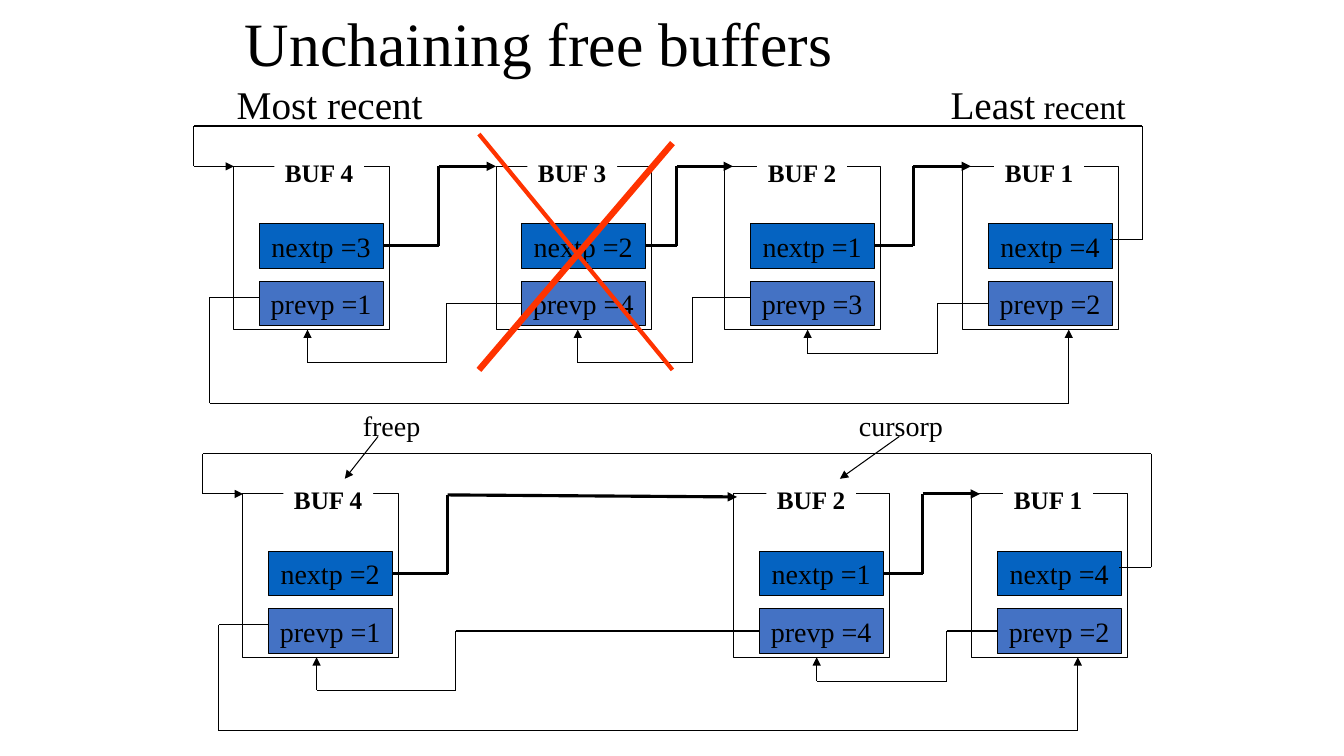
from dataclasses import dataclass

from lxml import etree
from pptx import Presentation
from pptx.dml.color import RGBColor
from pptx.enum.shapes import MSO_CONNECTOR, MSO_SHAPE
from pptx.enum.text import MSO_ANCHOR, MSO_AUTO_SIZE, PP_ALIGN
from pptx.oxml.ns import qn
from pptx.shapes.autoshape import Shape
from pptx.slide import Slide
from pptx.util import Inches, Pt

BLACK = RGBColor(0x00, 0x00, 0x00)
WHITE = RGBColor(0xFF, 0xFF, 0xFF)
NEXT_BLUE = RGBColor(0x05, 0x63, 0xC1)
PREV_BLUE = RGBColor(0x44, 0x72, 0xC4)
RED = RGBColor(0xFF, 0x33, 0x00)
FONT = "Times New Roman"
THIN, BOLD = 0.75, 2.25
FRAME_TOP = 1.65
SIDES = {"nextp": 3, "prevp": 1}

Point = tuple[float, float]
Cells = dict[tuple[str, int], Shape]


@dataclass
class Buffer:
    number: int
    left: float
    label_left: float
    nextp: int
    prevp: int


@dataclass
class Link:
    """A bent arrow; with a source cell it starts at the middle of that cell's side."""
    points: list[Point]
    width: float = THIN
    source: tuple[str, int] | None = None


@dataclass
class Chain:
    dx: float
    dy: float
    buffers: list[Buffer]
    links: list[Link]


@dataclass
class Caption:
    left: float
    top: float
    width: float
    height: float
    runs: list[tuple[str, int]]


COMMON_LINKS = [
    Link([(11.01, 2.38), (11.33, 2.38), (11.33, 1.25), (1.92, 1.25), (1.92, 1.65), (2.32, 1.65)]),
    Link([(2.57, 2.95), (2.08, 2.95), (2.08, 4), (10.6, 4), (10.6, 3.27)]),
    Link([(8.67, 2.44), (9.06, 2.44), (9.06, 1.65), (9.63, 1.65)], BOLD, ("nextp", 2)),
    Link([(9.8, 3.01), (9.3, 3.01), (9.3, 3.51), (8.01, 3.51), (8.01, 3.27)], THIN, ("prevp", 1)),
]
TO_BUF_4 = [(4.43, 3.01), (4.43, 3.6), (3.05, 3.6), (3.05, 3.27)]
BUF_1 = Buffer(1, 9.55, 9.86, nextp=4, prevp=2)

CHAINS = [
    Chain(0, 0, [
        Buffer(4, 2.32, 2.72, nextp=3, prevp=1),
        Buffer(3, 4.92, 5.23, nextp=2, prevp=4),
        Buffer(2, 7.19, 7.51, nextp=1, prevp=3),
        BUF_1,
    ], COMMON_LINKS + [
        Link([(3.8, 2.44), (4.35, 2.44), (4.35, 1.65), (4.92, 1.65)], BOLD, ("nextp", 4)),
        Link([(6.4, 2.44), (6.71, 2.44), (6.71, 1.65), (7.27, 1.65)], BOLD, ("nextp", 3)),
        Link([(5.17, 3.01)] + TO_BUF_4, THIN, ("prevp", 3)),
        Link([(7.44, 2.95), (6.87, 2.95), (6.87, 3.6), (5.73, 3.6), (5.73, 3.27)]),
    ]),
    Chain(0.09, 3.25, [
        Buffer(4, 2.32, 2.72, nextp=2, prevp=1),
        Buffer(2, 7.19, 7.51, nextp=1, prevp=4),
        BUF_1,
    ], COMMON_LINKS + [
        Link([(3.8, 2.44), (4.35, 2.44), (4.35, 1.66), (7.22, 1.68)], BOLD, ("nextp", 4)),
        Link([(7.44, 3.01)] + TO_BUF_4, THIN, ("prevp", 2)),
    ]),
]
CAPTIONS = [
    Caption(2.25, 0.75, 2.3, 0.57, [("Most recent", 28)]),
    Caption(9.33, 0.75, 2.2, 0.57, [("Least", 28), (" recent", 24)]),
    Caption(3.5, 4, 0.9, 0.43, [("freep", 20)]),
    Caption(8.42, 4, 1.2, 0.43, [("cursorp", 20)]),
]
POINTERS = [((3.75, 4.33), (3.42, 4.75)), ((8.92, 4.33), (8.33, 4.75))]
CROSS = [((6.67, 1.42), (4.75, 3.67), 4.5), ((4.75, 1.33), (6.67, 3.67), 3)]


def write(sp: Shape, runs: list[tuple[str, int]], align: PP_ALIGN, wrap: bool, bold: bool = False) -> None:
    tf = sp.text_frame
    tf.word_wrap = wrap
    p = tf.paragraphs[0]
    p.alignment = align
    for text, size in runs:
        r = p.add_run()
        r.text = text
        formats = {"name": FONT, "size": Pt(size), "bold": bold}
        for name, value in formats.items():
            setattr(r.font, name, value)
        r.font.color.rgb = BLACK


def add_box(s: Slide, left: float, top: float, width: float, height: float,
            fill: RGBColor, outlined: bool = True) -> Shape:
    sp = s.shapes.add_shape(MSO_SHAPE.RECTANGLE, *map(Inches, (left, top, width, height)))
    sp.shadow.inherit = False
    sp.fill.solid()
    sp.fill.fore_color.rgb = fill
    if outlined:
        sp.line.color.rgb = BLACK
        sp.line.width = Pt(THIN)
    else:
        sp.line.fill.background()
    return sp


def add_line(s: Slide, start: Point, end: Point, width: float = THIN,
             color: RGBColor = BLACK, arrow: bool = False, source: Shape | None = None,
             side: int = 0) -> None:
    line = s.shapes.add_connector(MSO_CONNECTOR.STRAIGHT, *map(Inches, start + end))
    line.line.color.rgb = color
    line.line.width = Pt(width)
    if arrow:
        etree.SubElement(line.line._get_or_add_ln(), qn("a:tailEnd"), type="triangle")
    etree.SubElement(line._element.spPr, qn("a:effectLst"))
    if source is not None:
        line.begin_connect(source, side)


def add_buffer(s: Slide, chain: Chain, buf: Buffer) -> Cells:
    """Draw one buffer and return its pointer cells by field and number."""
    left, top = buf.left + chain.dx, FRAME_TOP + chain.dy
    add_box(s, left, top, 1.54, 1.62, WHITE)
    label = add_box(s, buf.label_left + chain.dx, top - 0.14, 0.89, 0.4, WHITE, outlined=False)
    write(label, [(f"BUF {buf.number}", 18)], PP_ALIGN.CENTER, wrap=False, bold=True)
    cells: Cells = {}
    fields = [("nextp", buf.nextp, 0.57, NEXT_BLUE), ("prevp", buf.prevp, 1.14, PREV_BLUE)]
    for field, target, drop, color in fields:
        cell = add_box(s, left + 0.25, top + drop, 1.23, 0.44, color)
        write(cell, [(f"{field} ={target}", 20)], PP_ALIGN.CENTER, wrap=True)
        cells[field, buf.number] = cell
    return cells


def add_chain(s: Slide, chain: Chain) -> None:
    cells: Cells = {}
    for buf in chain.buffers:
        cells.update(add_buffer(s, chain, buf))
    for link in chain.links:
        points = [(x + chain.dx, y + chain.dy) for x, y in link.points]
        last = len(points) - 2
        for i, (start, end) in enumerate(zip(points, points[1:])):
            joined = link.source if i == 0 else None
            add_line(s, start, end, link.width, arrow=i == last,
                     source=cells[joined] if joined else None,
                     side=SIDES[joined[0]] if joined else 0)


def add_title(s: Slide, text: str) -> None:
    title = s.shapes.title
    box = {"left": 2.33, "top": 0, "width": 8.5, "height": 0.92}
    for name, value in box.items():
        setattr(title, name, Inches(value))
    write(title, [(text, 44)], PP_ALIGN.LEFT, wrap=True)
    title.text_frame.auto_size = MSO_AUTO_SIZE.NONE
    title.text_frame.vertical_anchor = MSO_ANCHOR.MIDDLE
    title.text_frame.paragraphs[0].line_spacing = 0.9


def main() -> None:
    prs = Presentation()
    prs.slide_width, prs.slide_height = Inches(13.33), Inches(7.5)
    s = prs.slides.add_slide(prs.slide_layouts[5])
    add_title(s, "Unchaining free buffers")
    for chain in CHAINS:
        add_chain(s, chain)
    for start, end, width in CROSS:
        add_line(s, start, end, width, RED)
    for c in CAPTIONS:
        box = s.shapes.add_textbox(*map(Inches, (c.left, c.top, c.width, c.height)))
        write(box, c.runs, PP_ALIGN.LEFT, wrap=False)
    for start, end in POINTERS:
        add_line(s, start, end, arrow=True)
    prs.save("out.pptx")


if __name__ == "__main__":
    main()
